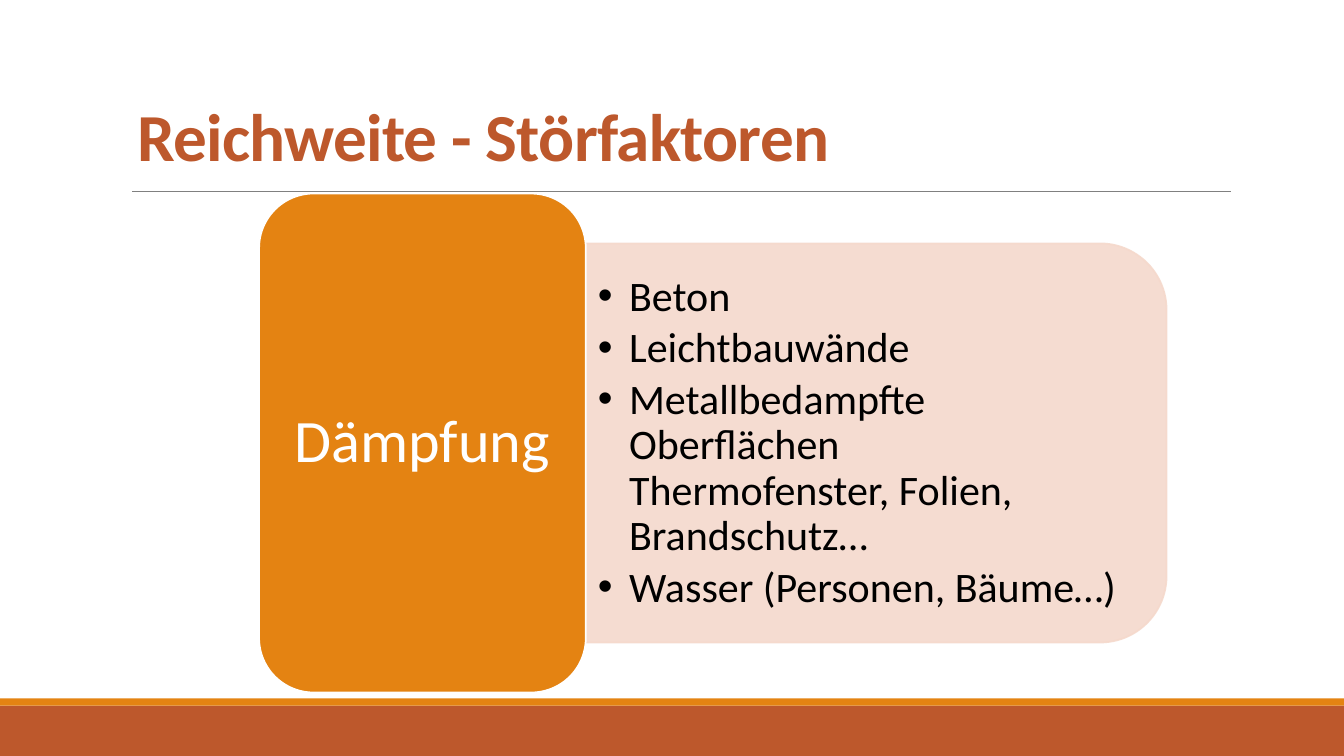
import copy

import pptx
import pptx.dml.color
import pptx.enum.shapes
import pptx.enum.text
import pptx.oxml
import pptx.oxml.ns
import pptx.util

Inches, Pt = pptx.util.Inches, pptx.util.Pt
SHAPE = pptx.enum.shapes.MSO_SHAPE
ALIGN = pptx.enum.text.PP_ALIGN
ANCHOR = pptx.enum.text.MSO_ANCHOR
qn = pptx.oxml.ns.qn

# Content
TITLE = "Reichweite - Störfaktoren"
TOPIC = "Dämpfung"
FACTORS = [
    "Beton",
    "Leichtbauwände",
    "Metallbedampfte Oberflächen \vThermofenster, Folien, Brandschutz…",
    "Wasser (Personen, Bäume…)",
]

# Look and layout, in inches
FONT = "Calibri"
RUST, ORANGE, PEACH = "BD582C", "E48312", "F5D9CC"
WHITE, BLACK, GRAY = "FFFFFF", "000000", "808080"
WIDTH, HEIGHT = 13.33, 7.5
FOOTER_TOP, STRIPE = 7.0, 0.07
TOPIC_BOX = (2.57, 1.92, 3.24, 4.95)
PANEL_WIDTH, PANEL_HEIGHT = 5.76, 3.96
INDENT = 0.31


def rgb(color):
    return pptx.dml.color.RGBColor.from_string(color)


def add_element(parent, tag, attributes=""):
    namespace = pptx.oxml.ns.nsdecls("a")
    parent.append(pptx.oxml.parse_xml(f"<a:{tag} {namespace} {attributes}/>"))


def place(shape, box):
    shape.left, shape.top, shape.width, shape.height = map(Inches, box)


def add_filled(slide, kind, box, fill, outline=None):
    shape = slide.shapes.add_shape(kind, *map(Inches, box))
    shape.shadow.inherit = False
    shape.fill.solid()
    shape.fill.fore_color.rgb = rgb(fill)
    if outline:
        shape.line.color.rgb = rgb(outline)
        shape.line.width = Pt(1.25)
    else:
        shape.line.fill.background()
    return shape


def set_frame(frame, anchor, margin_x, margin_y):
    frame.word_wrap = True
    frame.auto_size = pptx.enum.text.MSO_AUTO_SIZE.NONE
    frame.vertical_anchor = anchor
    frame.margin_left = frame.margin_right = Inches(margin_x)
    frame.margin_top = frame.margin_bottom = Inches(margin_y)


def format_paragraph(paragraph, size, color, align, spacing=0.9, bold=False):
    paragraph.alignment = align
    paragraph.line_spacing = spacing
    paragraph.space_before = Pt(0)
    for run in paragraph.runs:
        run.font.name = FONT
        run.font.size = Pt(size)
        run.font.bold = bold
        run.font.color.rgb = rgb(color)


presentation = pptx.Presentation()
presentation.slide_width = Inches(WIDTH)
presentation.slide_height = Inches(HEIGHT)
slide = presentation.slides.add_slide(presentation.slide_layouts[1])

# Footer bands and rule below the title
add_filled(slide, SHAPE.RECTANGLE, (0, FOOTER_TOP, WIDTH, HEIGHT - FOOTER_TOP), RUST)
add_filled(slide, SHAPE.RECTANGLE, (0, FOOTER_TOP - STRIPE, WIDTH, STRIPE), ORANGE)
rule = slide.shapes.add_connector(
    pptx.enum.shapes.MSO_CONNECTOR.STRAIGHT, *map(Inches, (1.31, 1.9, 12.21, 1.9)))
rule.line.color.rgb = rgb(GRAY)
rule.line.width = Pt(0.5)
add_element(rule.element.spPr, "effectLst")

# Title
title = slide.shapes.title
place(title, (1.26, 0.34, 11, 1.45))
set_frame(title.text_frame, ANCHOR.BOTTOM, 0.1, 0.05)
title.text_frame.text = TITLE
heading = title.text_frame.paragraphs[0]
format_paragraph(heading, 48, RUST, ALIGN.LEFT, spacing=0.85, bold=True)
heading.runs[0].font._element.set("spc", "-50")

# Panel: turned a quarter so that its rounded corners face right
topic_left, topic_top, topic_width, topic_height = TOPIC_BOX
panel_left = topic_left + topic_width
center_x = panel_left + PANEL_WIDTH / 2
center_y = topic_top + topic_height / 2
panel = add_filled(
    slide, SHAPE.ROUND_2_SAME_RECTANGLE,
    (center_x - PANEL_HEIGHT / 2, center_y - PANEL_WIDTH / 2, PANEL_HEIGHT, PANEL_WIDTH),
    PEACH, PEACH)
panel.rotation = 90
for color in panel.element.spPr.iter(qn("a:srgbClr")):
    add_element(color, "alpha", 'val="90000"')

# Factor list, brought in front of the panel
factors = slide.placeholders[1]
place(factors, (panel_left, center_y - 3.57 / 2, 5.57, 3.57))
slide.shapes.element.append(factors.element)
set_frame(factors.text_frame, ANCHOR.MIDDLE, 0.12, 0.06)
for index, factor in enumerate(FACTORS):
    frame = factors.text_frame
    paragraph = frame.add_paragraph() if index else frame.paragraphs[0]
    paragraph.text = factor
    properties = paragraph._p.get_or_add_pPr()
    properties.set("marL", str(Inches(INDENT)))
    properties.set("indent", str(-Inches(INDENT)))
    add_element(properties, "buFont", 'typeface="Arial"')
    add_element(properties, "buChar", 'char="•"')
    format_paragraph(paragraph, 30, BLACK, ALIGN.LEFT)
    paragraph.space_after = Pt(4.5)
    for line_break in paragraph._p.findall(qn("a:br")):
        line_break.append(copy.deepcopy(paragraph.runs[0].font._element))

# Topic box
topic = add_filled(slide, SHAPE.ROUNDED_RECTANGLE, TOPIC_BOX, ORANGE, WHITE)
set_frame(topic.text_frame, ANCHOR.MIDDLE, 0.18, 0.09)
topic.text_frame.text = TOPIC
format_paragraph(topic.text_frame.paragraphs[0], 43, WHITE, ALIGN.CENTER)

presentation.save("out.pptx")
